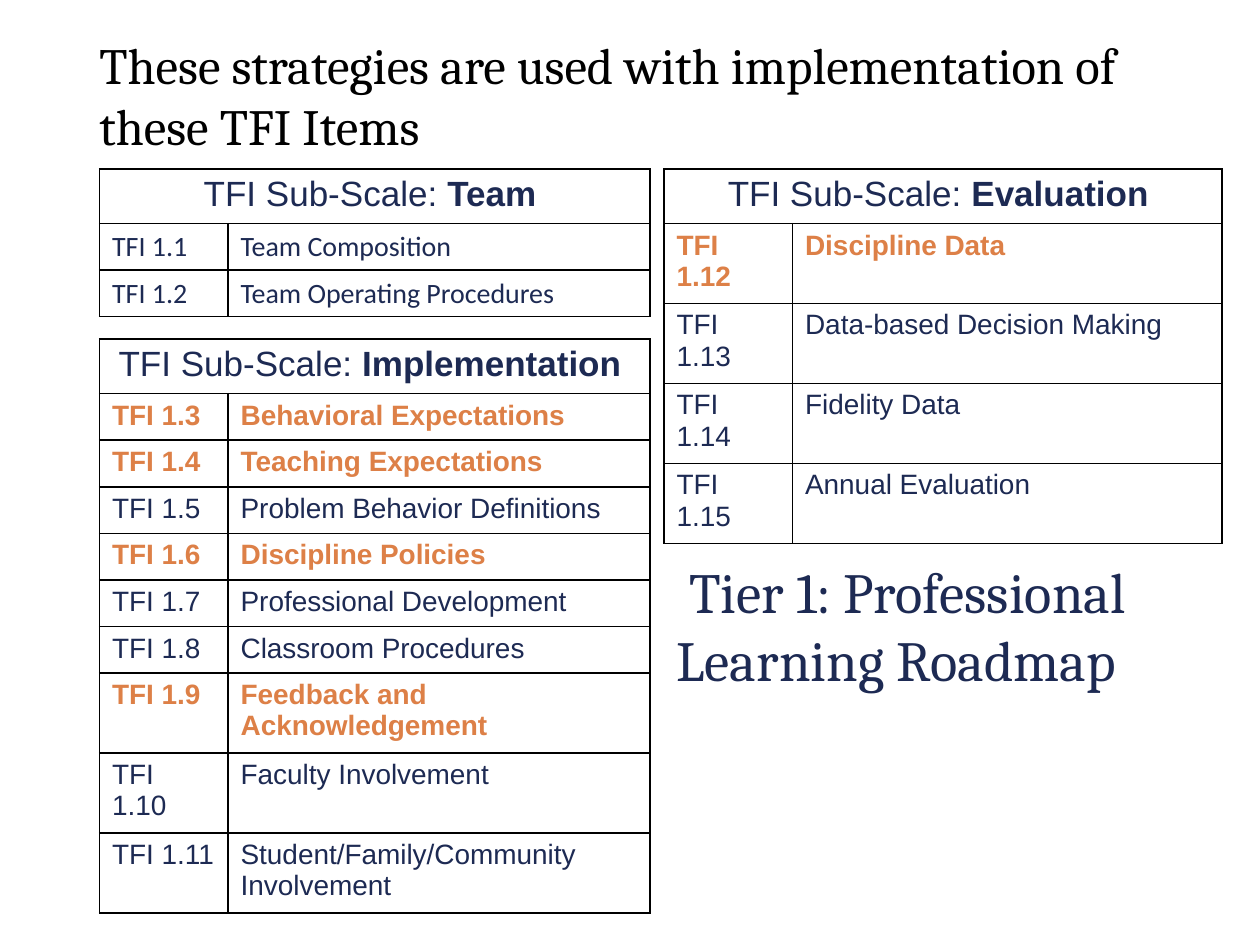
from lxml import etree
from pptx import Presentation
from pptx.dml.color import RGBColor
from pptx.enum.text import MSO_ANCHOR, MSO_AUTO_SIZE, PP_ALIGN
from pptx.oxml.ns import qn
from pptx.util import Inches, Pt

LEFT, CENTER = PP_ALIGN.LEFT, PP_ALIGN.CENTER
MIDDLE, TOP = MSO_ANCHOR.MIDDLE, MSO_ANCHOR.TOP
NO_FIT = MSO_AUTO_SIZE.NONE
COLORS = {"navy": "1D2A53", "orange": "DD8047", "black": "000000"}
HEADER_HEIGHT, LINE_HEIGHT, TWO_LINE_HEIGHT = 0.43, 0.37, 0.635
CODE_WIDTH = 1.02

# Each item: number, name, highlighted, row height
TABLES = [
    {"scale": "Team", "left": 0.79, "top": 1.34, "name_width": 3.35, "font": "Calibri",
     "items": [
         ("1.1", "Team Composition", False, LINE_HEIGHT),
         ("1.2", "Team Operating Procedures", False, LINE_HEIGHT)]},
    {"scale": "Implementation", "left": 0.79, "top": 2.69, "name_width": 3.35, "font": "Arial",
     "items": [
         ("1.3", "Behavioral Expectations", True, LINE_HEIGHT),
         ("1.4", "Teaching Expectations", True, LINE_HEIGHT),
         ("1.5", "Problem Behavior Definitions", False, LINE_HEIGHT),
         ("1.6", "Discipline Policies", True, LINE_HEIGHT),
         ("1.7", "Professional Development", False, LINE_HEIGHT),
         ("1.8", "Classroom Procedures", False, LINE_HEIGHT),
         ("1.9", "Feedback and Acknowledgement", True, TWO_LINE_HEIGHT),
         ("1.10", "Faculty Involvement", False, TWO_LINE_HEIGHT),
         ("1.11", "Student/Family/Community Involvement", False, TWO_LINE_HEIGHT)]},
    {"scale": "Evaluation", "left": 5.27, "top": 1.34, "name_width": 3.41, "font": "Arial",
     "items": [
         ("1.12", "Discipline Data", True, TWO_LINE_HEIGHT),
         ("1.13", "Data-based Decision Making", False, TWO_LINE_HEIGHT),
         ("1.14", "Fidelity Data", False, TWO_LINE_HEIGHT),
         ("1.15", "Annual Evaluation", False, TWO_LINE_HEIGHT)]},
]


def add_span(para, text, size, font, color, bold=False):
    span = para.add_run()
    span.text = text
    span.font.size = Pt(size)
    span.font.name = font
    span.font.bold = bold
    span.font.color.rgb = RGBColor.from_string(COLORS[color])


def outline_cell(cell):
    """Give a cell thin black borders and no fill."""
    properties = cell._tc.get_or_add_tcPr()
    for side in ("lnL", "lnR", "lnT", "lnB"):
        line = etree.SubElement(properties, qn(f"a:{side}"), w=str(Pt(1)))
        fill = etree.SubElement(line, qn("a:solidFill"))
        etree.SubElement(fill, qn("a:srgbClr"), val=COLORS["black"])
    cell.fill.background()


deck = Presentation()
deck.slide_width, deck.slide_height = Inches(10), Inches(7.5)
page = deck.slides.add_slide(deck.slide_layouts[5])

title = page.shapes.title
title.left, title.top = Inches(5.27), Inches(4.46)
title.width, title.height = Inches(4.32), Inches(1)
frame = title.text_frame
frame.auto_size = NO_FIT
frame.word_wrap = True
frame.vertical_anchor = MIDDLE
frame.paragraphs[0].alignment = LEFT
add_span(frame.paragraphs[0], " Tier 1: Professional Learning Roadmap", 32.4, "Cambria", "navy")

intro = page.shapes.add_textbox(Inches(0.69), Inches(0.17), Inches(8.55), Inches(1.18))
frame = intro.text_frame
frame.word_wrap = True
frame.vertical_anchor = TOP
frame.margin_top = frame.margin_bottom = Inches(0.1)
add_span(frame.paragraphs[0], "These strategies are used with implementation of these TFI Items",
         29, "Cambria", "black")

for spec_table in TABLES:
    items = spec_table["items"]
    heights = [HEADER_HEIGHT] + [item[3] for item in items]
    widths = [CODE_WIDTH, spec_table["name_width"]]
    table = page.shapes.add_table(
        len(heights), 2, Inches(spec_table["left"]), Inches(spec_table["top"]),
        Inches(sum(widths)), Inches(sum(heights))).table
    table.first_row = table.horz_banding = False
    for column, width in zip(table.columns, widths):
        column.width = Inches(width)
    for row, height in zip(table.rows, heights):
        row.height = Inches(height)
    for cell in table.iter_cells():
        outline_cell(cell)

    table.cell(0, 0).merge(table.cell(0, 1))
    para = table.cell(0, 0).text_frame.paragraphs[0]
    para.alignment = CENTER
    add_span(para, "TFI Sub-Scale: ", 20, "Arial", "navy")
    add_span(para, spec_table["scale"] + " ", 20, "Arial", "navy", True)

    for index, (number, name, highlighted, _) in enumerate(items, start=1):
        color = "orange" if highlighted else "navy"
        for column, text in enumerate((f"TFI {number}", name)):
            para = table.cell(index, column).text_frame.paragraphs[0]
            add_span(para, text, 16, spec_table["font"], color, highlighted)

deck.save("out.pptx")
